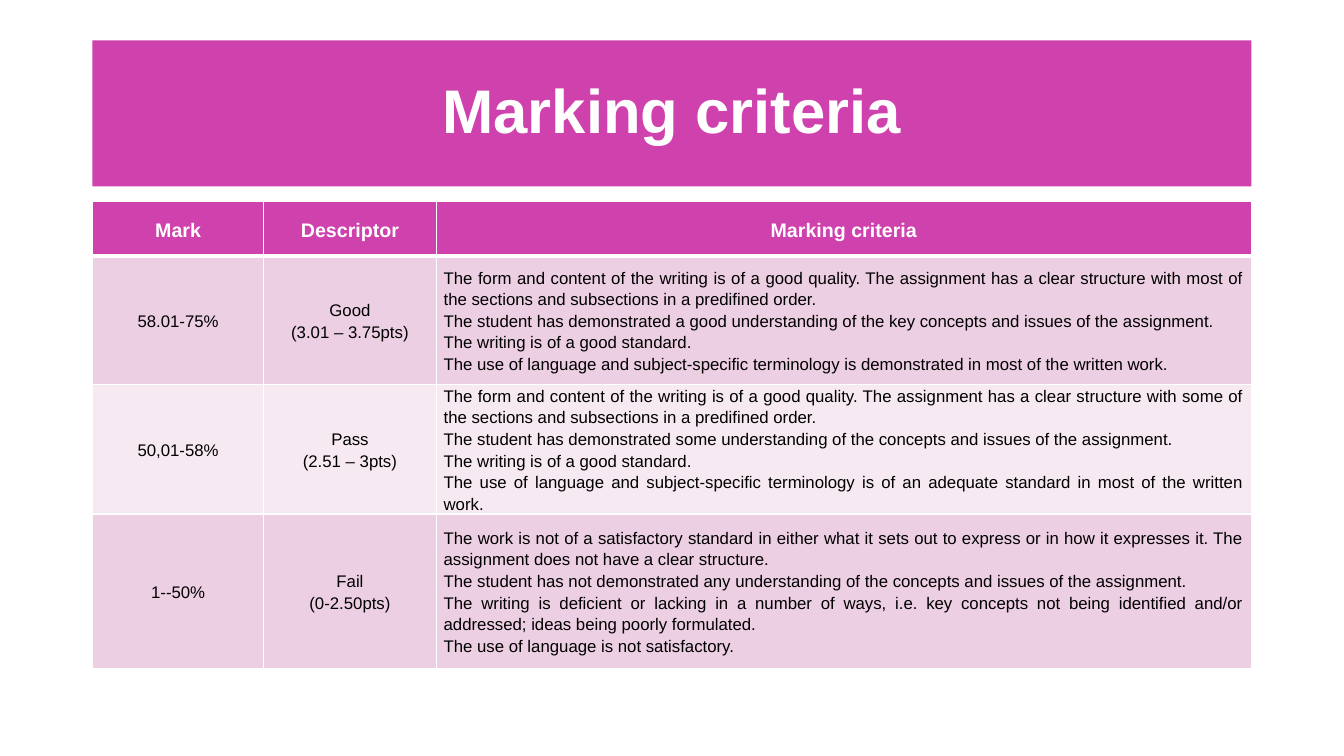
from lxml import etree
from pptx import Presentation
from pptx import util as u
from pptx.dml.color import RGBColor
from pptx.enum import shapes, text
from pptx.oxml.ns import qn

COLORS = {"magenta": "CF41AD", "pink": "EDCFE3", "pale": "F6E9F1",
          "white": "FFFFFF", "black": "000000"}
LEFT, WIDTH = 2.33, 29.21

HEADERS = ["Mark", "Descriptor", "Marking criteria"]
GRADES = [
    (["58.01-75%"], ["Good", "(3.01 – 3.75pts)"], [
        "The form and content of the writing is of a good quality. The assignment has a clear "
        "structure with most of the sections and subsections in a predifined order.",
        "The student has demonstrated a good understanding of the key concepts and issues of "
        "the assignment.",
        "The writing is of a good standard.",
        "The use of language and subject-specific terminology is demonstrated in most of the "
        "written work."]),
    (["50,01-58%"], ["Pass", "(2.51 – 3pts)"], [
        "The form and content of the writing is of a good quality. The assignment has a clear "
        "structure with some of the sections and subsections in a predifined order.",
        "The student has demonstrated some understanding of the concepts and issues of the "
        "assignment.",
        "The writing is of a good standard.",
        "The use of language and subject-specific terminology is of an adequate standard in "
        "most of the written work."]),
    (["1--50%"], ["Fail", "(0-2.50pts)"], [
        "The work is not of a satisfactory standard in either what it sets out to express or "
        "in how it expresses it. The assignment does not have a clear structure.",
        "The student has not demonstrated any understanding of the concepts and issues of the "
        "assignment.",
        "The writing is deficient or lacking in a number of ways, i.e. key concepts not being "
        "identified and/or addressed; ideas being poorly formulated.",
        "The use of language is not satisfactory."]),
]


class Deck:
    font = "Arial"

    def __init__(self, width, height):
        self.prs = Presentation()
        self.prs.slide_width, self.prs.slide_height = u.Cm(width), u.Cm(height)
        self.s = self.prs.slides.add_slide(self.prs.slide_layouts[6])

    def fill(self, obj, color):
        obj.fill.solid()
        obj.fill.fore_color.rgb = RGBColor.from_string(COLORS[color])

    def paragraphs(self, tf, lines, size, color, bold=False, align="CENTER", spacing=1.15):
        tf.word_wrap = True
        for i, line in enumerate(lines):
            p = tf.add_paragraph() if i else tf.paragraphs[0]
            p.text = line
            p.alignment = text.PP_ALIGN[align]
            p.line_spacing = spacing
            p.font.name, p.font.size, p.font.bold = self.font, u.Pt(size), bold
            p.font.color.rgb = RGBColor.from_string(COLORS[color])

    def banner(self, title, left, top, width, height):
        sp = self.s.shapes.add_shape(shapes.MSO_SHAPE.RECTANGLE,
                                     *map(u.Cm, (left, top, width, height)))
        sp.shadow.inherit = False
        sp.line.fill.background()
        self.fill(sp, "magenta")
        sp.text_frame.vertical_anchor = text.MSO_ANCHOR.MIDDLE
        self.paragraphs(sp.text_frame, [title], 44, "white", bold=True, spacing=0.9)

    def borders(self, cell, **widths):
        tc_pr = cell._tc.get_or_add_tcPr()
        for side in "LRTB":
            ln = etree.SubElement(tc_pr, qn(f"a:ln{side}"), w=str(u.Pt(widths.get(side, 1))))
            solid = etree.SubElement(ln, qn("a:solidFill"))
            etree.SubElement(solid, qn("a:srgbClr"), val=COLORS["white"])

    def cell(self, cell, lines, fill, widths, **style):
        cell.margin_left = cell.margin_right = u.Cm(0.19)
        cell.margin_top = cell.margin_bottom = 0
        cell.vertical_anchor = text.MSO_ANCHOR.MIDDLE
        self.borders(cell, **widths)
        self.fill(cell, fill)
        self.paragraphs(cell.text_frame, lines, **style)

    def table(self, headers, rows, left, top, col_widths, row_heights):
        frame = self.s.shapes.add_table(
            len(row_heights), len(col_widths), u.Cm(left), u.Cm(top),
            u.Cm(sum(col_widths)), u.Cm(sum(row_heights)))
        table = frame.table
        for col, width in zip(table.columns, col_widths):
            col.width = u.Cm(width)
        for row, height in zip(table.rows, row_heights):
            row.height = u.Cm(height)
        # Header row with a thick rule below
        for c, header in enumerate(headers):
            self.cell(table.cell(0, c), [header], "magenta", {"B": 3},
                      size=14, color="white", bold=True)
        # Banded body rows, last column justified
        for r, row in enumerate(rows, start=1):
            for c, lines in enumerate(row):
                self.cell(table.cell(r, c), lines, "pink" if r % 2 else "pale",
                          {"T": 3} if r == 1 else {}, size=12, color="black",
                          align="JUSTIFY" if c == len(row) - 1 else "CENTER")


def main():
    deck = Deck(33.87, 19.05)
    # Title banner
    deck.banner("Marking criteria", LEFT, 1.02, WIDTH, 3.68)
    # Criteria table
    deck.table(HEADERS, GRADES, LEFT, 5.08, [4.32, 4.34, 20.55], [1.37, 3.23, 3.23, 3.89])
    deck.prs.save("out.pptx")


if __name__ == "__main__":
    main()
